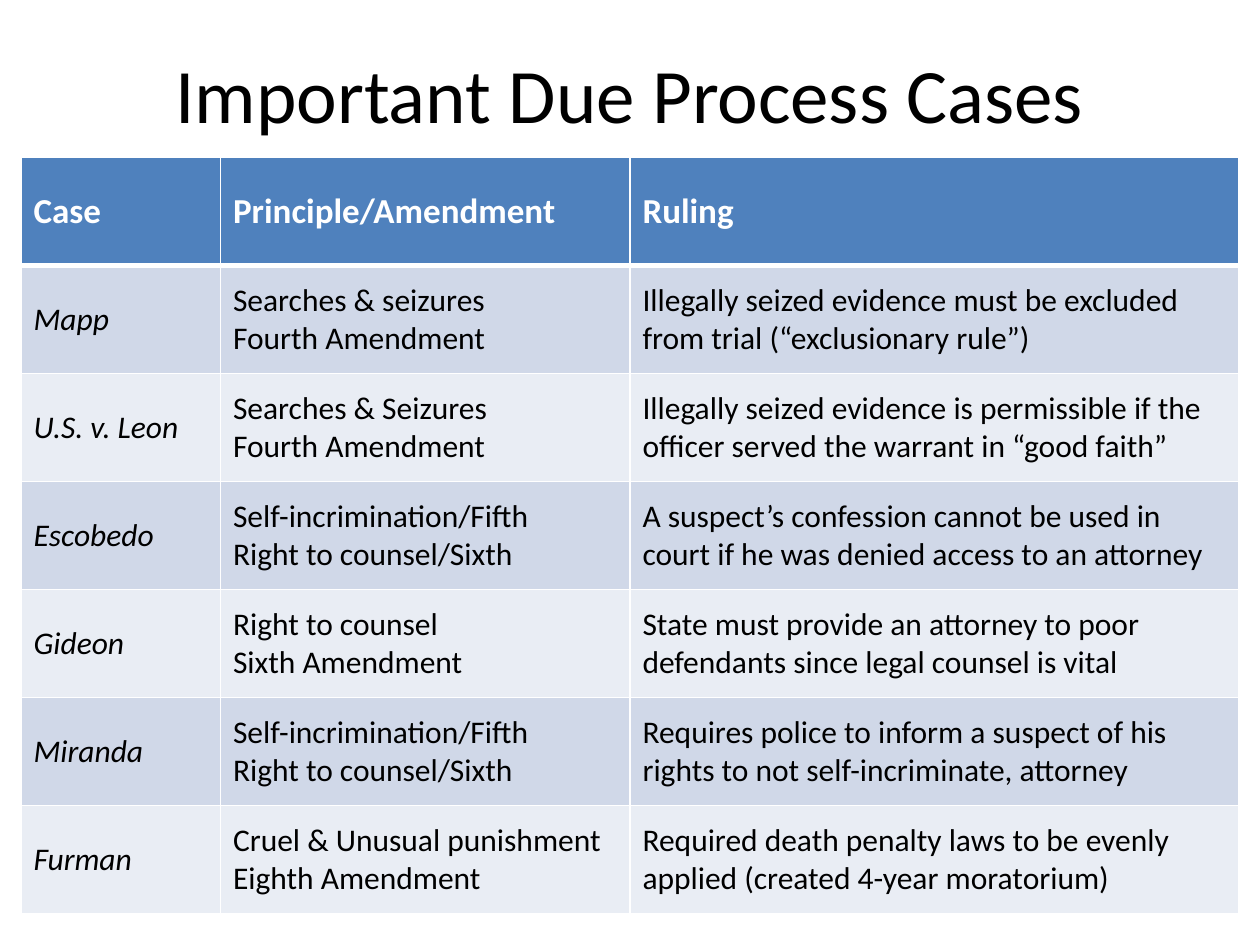
"""Build a slide with a table of important due process cases."""
from lxml import etree
from pptx import Presentation
from pptx import util as u
from pptx.dml import color
from pptx.enum import text
from pptx.oxml import ns

COLORS = {"header": "4F81BD", "odd": "D0D8E8", "even": "E9EDF4",
          "white": "FFFFFF", "black": "000000"}
HEADINGS = ["Case", "Principle/Amendment", "Ruling"]
CASES = [
    ("Mapp", "Searches & seizures\nFourth Amendment",
     "Illegally seized evidence must be excluded from trial (“exclusionary rule”)"),
    ("U.S. v. Leon", "Searches & Seizures\nFourth Amendment",
     "Illegally seized evidence is permissible if the officer served the warrant in “good faith”"),
    ("Escobedo", "Self-incrimination/Fifth\nRight to counsel/Sixth",
     "A suspect’s confession cannot be used in court if he was denied access to an attorney"),
    ("Gideon", "Right to counsel\nSixth Amendment",
     "State must provide an attorney to poor defendants since legal counsel is vital"),
    ("Miranda", "Self-incrimination/Fifth\nRight to counsel/Sixth",
     "Requires police to inform a suspect of his rights to not self-incriminate, attorney"),
    ("Furman", "Cruel & Unusual punishment\nEighth Amendment",
     "Required death penalty laws to be evenly applied (created 4-year moratorium)"),
]


class Deck:
    def __init__(self, width, height, font):
        self.prs = Presentation()
        self.prs.slide_width, self.prs.slide_height = u.Pt(width), u.Pt(height)
        self.font = font
        self.slide = self.prs.slides.add_slide(self.prs.slide_layouts[5])

    def add_text(self, frame, wording, size, ink, bold=False, italic=False, align=None):
        frame.word_wrap = True
        for index, line in enumerate(wording.split("\n")):
            paragraph = frame.add_paragraph() if index else frame.paragraphs[0]
            paragraph.alignment = align
            run = paragraph.add_run()
            run.text = line
            run.font.name, run.font.size = self.font, u.Pt(size)
            run.font.bold, run.font.italic = bold, italic
            run.font.color.rgb = color.RGBColor.from_string(COLORS[ink])

    def title(self, wording, left, top, width, height):
        heading = self.slide.shapes.title
        heading.left, heading.top = u.Pt(left), u.Pt(top)
        heading.width, heading.height = u.Pt(width), u.Pt(height)
        heading.text_frame.vertical_anchor = text.MSO_ANCHOR.MIDDLE
        self.add_text(heading.text_frame, wording, 44, "black", align=text.PP_ALIGN.CENTER)

    def borders(self, cell, widths):
        properties = cell._tc.get_or_add_tcPr()
        for side, width in widths.items():
            line = etree.SubElement(properties, ns.qn(f"a:ln{side}"), w=str(u.Pt(width)))
            fill = etree.SubElement(line, ns.qn("a:solidFill"))
            etree.SubElement(fill, ns.qn("a:srgbClr"), val=COLORS["white"])

    def table(self, rows, left, top, widths, height):
        grid = self.slide.shapes.add_table(
            len(rows), len(widths), u.Pt(left), u.Pt(top),
            u.Pt(sum(widths)), u.Pt(height)).table
        for column, width in zip(grid.columns, widths):
            column.width = u.Pt(width)
        for r, row in enumerate(rows):
            grid.rows[r].height = u.Pt(height / len(rows))
            header = r == 0
            band = "header" if header else "odd" if r % 2 else "even"
            edges = {"L": 1, "R": 1, "T": 3 if r == 1 else 1, "B": 3 if header else 1}
            for c, wording in enumerate(row):
                cell = grid.cell(r, c)
                cell.vertical_anchor = text.MSO_ANCHOR.MIDDLE
                self.borders(cell, edges)
                cell.fill.solid()
                cell.fill.fore_color.rgb = color.RGBColor.from_string(COLORS[band])
                self.add_text(cell.text_frame, wording, 20 if header else 18,
                              "white" if header else "black",
                              bold=header, italic=c == 0 and not header)


def main():
    deck = Deck(720, 540, "Calibri")
    deck.title("Important Due Process Cases", 36, 21.6, 648, 62.4)
    deck.table([HEADINGS] + CASES, 12, 90, [114, 234, 348], 432)
    deck.prs.save("out.pptx")


if __name__ == "__main__":
    main()
